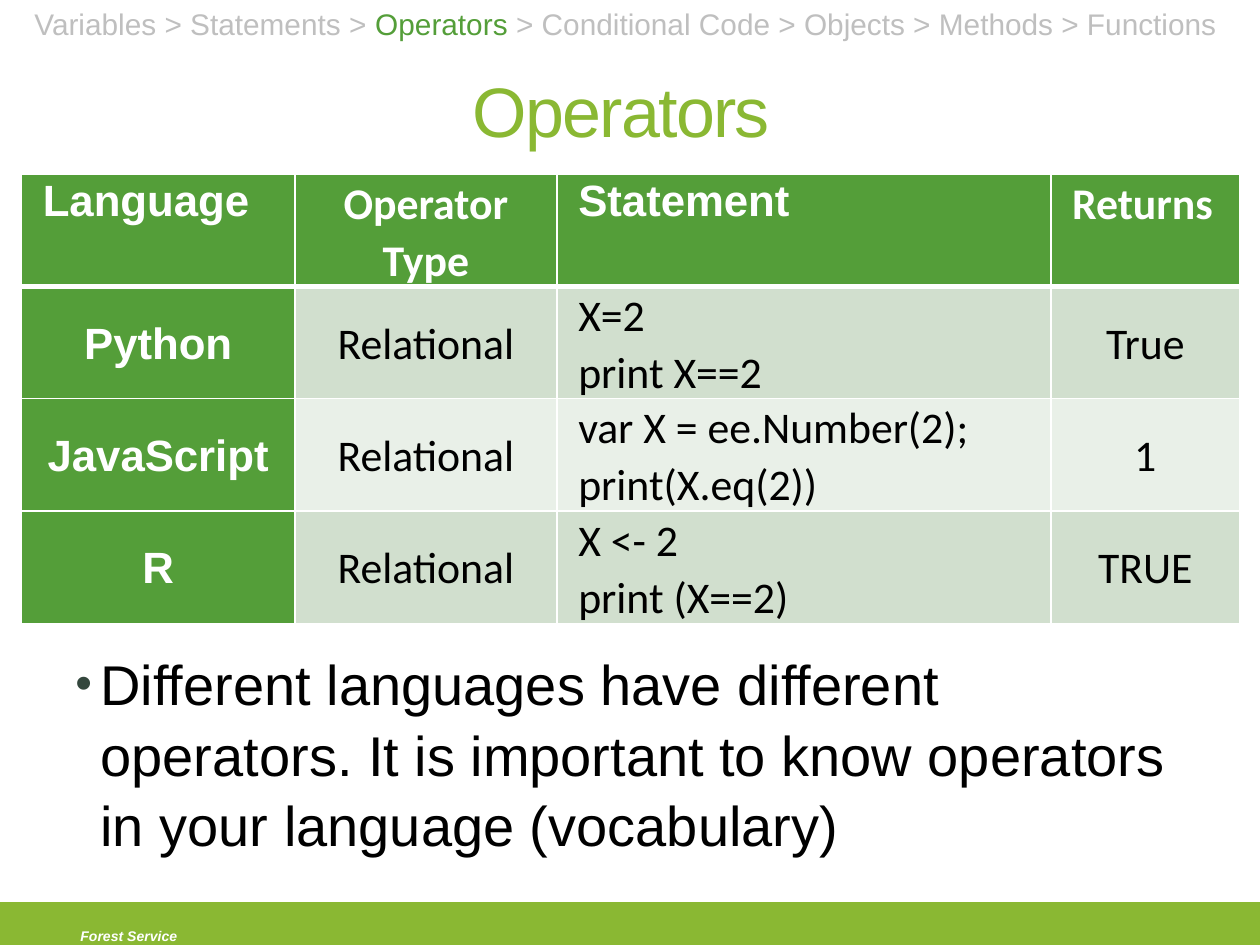
"""Build a slide comparing relational operators across languages."""
from lxml import etree
from pptx import Presentation
from pptx.dml.color import RGBColor
from pptx.enum import shapes, text
from pptx.oxml import ns
from pptx.util import Inches, Pt

GREEN = RGBColor(0x54, 0x9E, 0x39)
LIME = RGBColor(0x8A, 0xB8, 0x33)
SLATE = RGBColor(0x34, 0x47, 0x3D)
GRAY = RGBColor(0xBF, 0xBF, 0xBF)
PALE = RGBColor(0xD1, 0xDF, 0xCE)
PALER = RGBColor(0xE9, 0xF0, 0xE8)
WHITE = RGBColor(0xFF, 0xFF, 0xFF)
BLACK = RGBColor(0, 0, 0)
CENTER = text.PP_ALIGN.CENTER
MIDDLE = text.MSO_ANCHOR.MIDDLE


def write(para, words, size=25, color=BLACK, font="Arial", bold=False,
          italic=False, align=None, spacing=None):
    span = para.add_run()
    span.text = words
    span.font.size = Pt(size)
    span.font.color.rgb = color
    span.font.name = font
    span.font.bold = bold
    span.font.italic = italic
    if align is not None:
        para.alignment = align
    if spacing is not None:
        para.line_spacing = spacing
    return span


def add_box(page, left, top, width, height):
    box = page.shapes.add_textbox(Inches(left), Inches(top), Inches(width), Inches(height))
    box.text_frame.word_wrap = True
    return box.text_frame


deck = Presentation()
deck.slide_width = Inches(10)
deck.slide_height = Inches(7.5)
page = deck.slides.add_slide(deck.slide_layouts[6])

band = page.shapes.add_shape(
    shapes.MSO_SHAPE.RECTANGLE, 0, Inches(7.17), Inches(10), Inches(0.33))
band.shadow.inherit = False
band.fill.solid()
band.fill.fore_color.rgb = LIME
band.line.color.rgb = LIME
band.line.width = Pt(2.08)

footer = add_box(page, 0.54, 7.31, 2.04, 0.19)
write(footer.paragraphs[0], "Forest Service", size=8, color=WHITE, bold=True, italic=True)

title = add_box(page, 0.5, 0.33, 9, 1.08)
title.vertical_anchor = MIDDLE
heading = write(title.paragraphs[0], "Operators ", size=40, color=LIME, align=CENTER)
heading.font._element.set("spc", "-100")

body = add_box(page, 0.5, 5.08, 9, 1.83)
point = body.paragraphs[0]
point.line_spacing = 1.05
properties = point._p.get_or_add_pPr()
properties.set("marL", str(Inches(0.2)))
properties.set("indent", str(Inches(-0.2)))
bullet_color = etree.SubElement(properties, ns.qn("a:buClr"))
etree.SubElement(bullet_color, ns.qn("a:srgbClr"), val=str(SLATE))
etree.SubElement(properties, ns.qn("a:buSzPct"), val="85000")
etree.SubElement(properties, ns.qn("a:buFont"), typeface="Arial")
etree.SubElement(properties, ns.qn("a:buChar"), char="•")
write(point, "Different languages have different operators. It is important to know "
             "operators in your language (vocabulary)", size=32)

trail = add_box(page, 0, 0, 10, 0.39)
for words, color in [
    ("Variables > Statements > ", GRAY),
    ("Operators", GREEN),
    (" > Conditional Code > Objects > Methods > Functions ", GRAY),
]:
    write(trail.paragraphs[0], words, size=17, color=color, align=CENTER)

rows = [
    ("Language", "Operator Type", "Statement", "Returns"),
    ("Python", "Relational", "X=2\nprint X==2", "True"),
    ("JavaScript", "Relational", "var X = ee.Number(2);\nprint(X.eq(2))", "1"),
    ("R", "Relational", "X <- 2\nprint (X==2)", "TRUE"),
]
widths = [2.17, 2.08, 3.92, 1.5]
row_height = 0.89
table = page.shapes.add_table(
    len(rows), len(widths), Inches(0.17), Inches(1.38),
    Inches(sum(widths)), Inches(row_height * len(rows))).table
for column, width in zip(table.columns, widths):
    column.width = Inches(width)

for r, row in enumerate(rows):
    table.rows[r].height = Inches(row_height)
    for c, words in enumerate(row):
        cell = table.cell(r, c)
        header = r == 0
        strong = header or c == 0
        cell.margin_left = cell.margin_right = Inches(0.17)
        cell.margin_top = cell.margin_bottom = 0
        cell.vertical_anchor = text.MSO_ANCHOR.TOP if header else MIDDLE
        cell.fill.solid()
        cell.fill.fore_color.rgb = GREEN if strong else PALE if r % 2 else PALER
        centered = c == 1 if header else c != 2
        arial = c in (0, 2) if header else c == 0
        for i, line in enumerate(words.split("\n")):
            frame = cell.text_frame
            para = frame.add_paragraph() if i else frame.paragraphs[0]
            write(para, line, color=WHITE if strong else BLACK,
                  font="Arial" if arial else "Calibri", bold=strong,
                  align=CENTER if centered else text.PP_ALIGN.LEFT, spacing=1.07)
        for i, side in enumerate(("lnL", "lnR", "lnT", "lnB")):
            thick = (r, side) in ((0, "lnB"), (1, "lnT"))
            border = etree.Element(ns.qn(f"a:{side}"), w=str(Pt(3 if thick else 1)))
            paint = etree.SubElement(border, ns.qn("a:solidFill"))
            etree.SubElement(paint, ns.qn("a:srgbClr"), val=str(WHITE))
            cell._tc.get_or_add_tcPr().insert(i, border)

deck.save("out.pptx")
